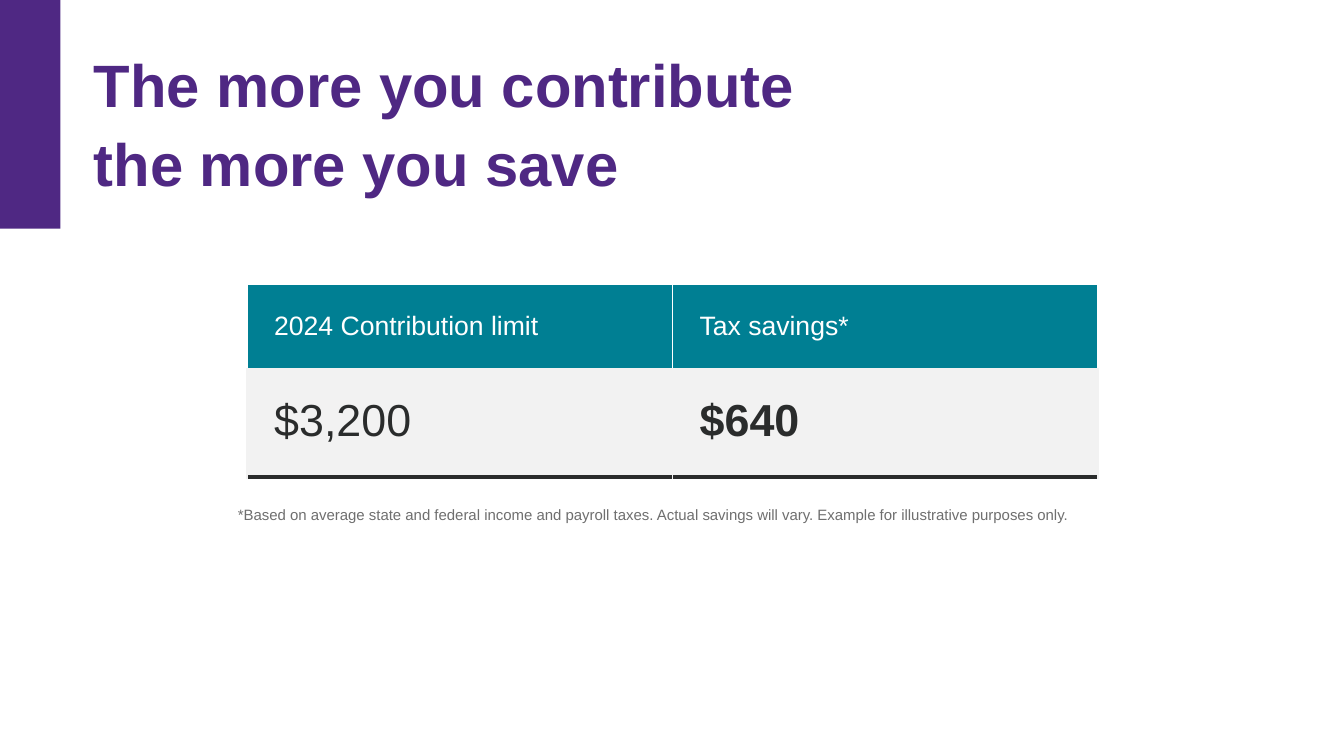
"""Build the slide on contribution limits and tax savings."""
from lxml import etree
from pptx import Presentation
from pptx import util as u
from pptx.dml.color import RGBColor
from pptx.enum import shapes, text
from pptx.oxml.ns import qn

TITLE = "The more you contribute\vthe more you save"
SAVINGS = [("2024 Contribution limit", "Tax savings*"), ("$3,200", "$640")]
FOOTNOTE = ("*Based on average state and federal income and payroll taxes. "
            "Actual savings will vary. Example for illustrative purposes only.")

THEME = {
    "font": "Arial",
    "purple": "4F2883", "teal": "007F93", "white": "FFFFFF",
    "pale": "F2F2F2", "ink": "2A2C2C", "grey": "6F6F6F",
    "title": 42.7, "header": 19, "figure": 32, "note": 10.7,
}
WIDTH, HEIGHT = 13.33, 7.5
BAR = (0, 0, 0.6, 2.27)
TITLE_AREA = (0.93, 0.4, 11.85, 1.52)
COLUMN, ROWS = 4.22, (0.84, 1.07)
TABLE_AREA = (2.45, 2.82, COLUMN * 2, sum(ROWS))
NOTE_AREA = (2.26, 4.97, 8.89, 0.28)
CELL_INSET = 0.27

ROW_STYLES = [
    {"fill": "teal", "color": "white", "size": "header", "anchor": text.MSO_ANCHOR.MIDDLE,
     "edges": {"L": ("white", 1), "R": ("white", 1), "T": ("white", 1), "B": ("pale", 1)}},
    {"fill": "pale", "color": "ink", "size": "figure", "anchor": text.MSO_ANCHOR.TOP,
     "edges": {"L": ("pale", 1), "R": ("pale", 1), "T": ("pale", 1), "B": ("ink", 3)}},
]


def color(name):
    return RGBColor.from_string(THEME[name])


def box(area):
    return [u.Inches(length) for length in area]


def set_all(target, values):
    for name, value in values.items():
        setattr(target, name, value)


def place(part, area):
    set_all(part, dict(zip(("left", "top", "width", "height"), box(area))))


def insets(length):
    sides = ("left", "top", "right", "bottom")
    return {f"margin_{side}": u.Inches(length) for side in sides}


def write(frame, words, size, ink, bold=False):
    frame.text = words
    for paragraph in frame.paragraphs:
        paragraph.alignment = text.PP_ALIGN.LEFT
        for run in paragraph.runs:
            set_all(run.font, {"name": THEME["font"], "size": u.Pt(THEME[size]), "bold": bold})
            run.font.color.rgb = color(ink)


def draw_edges(cell, edges):
    properties = cell._tc.get_or_add_tcPr()
    for side, (ink, points) in edges.items():
        edge = etree.SubElement(properties, qn(f"a:ln{side}"), w=str(u.Pt(points)))
        fill = etree.SubElement(edge, qn("a:solidFill"))
        etree.SubElement(fill, qn("a:srgbClr"), val=THEME[ink])


def add_bar(slide):
    bar = slide.shapes.add_shape(shapes.MSO_SHAPE.RECTANGLE, *box(BAR))
    bar.shadow.inherit = False
    bar.fill.solid()
    bar.fill.fore_color.rgb = color("purple")
    bar.line.fill.background()


def add_title(slide):
    title = slide.shapes.title
    place(title, TITLE_AREA)
    set_all(title.text_frame, {**insets(0), "word_wrap": True,
                               "vertical_anchor": text.MSO_ANCHOR.TOP,
                               "auto_size": text.MSO_AUTO_SIZE.NONE})
    write(title.text_frame, TITLE, "title", "purple", bold=True)
    title.text_frame.paragraphs[0].line_spacing = 1.1


def add_savings(slide):
    table = slide.shapes.add_table(len(SAVINGS), len(SAVINGS[0]), *box(TABLE_AREA)).table
    table.horz_banding = False
    for column in table.columns:
        column.width = u.Inches(COLUMN)
    for row, height, words, style in zip(table.rows, ROWS, SAVINGS, ROW_STYLES):
        row.height = u.Inches(height)
        for cell, label in zip(row.cells, words):
            set_all(cell, {**insets(CELL_INSET), "vertical_anchor": style["anchor"]})
            write(cell.text_frame, label, style["size"], style["color"],
                  bold=label == SAVINGS[-1][-1])
            draw_edges(cell, style["edges"])
            cell.fill.solid()
            cell.fill.fore_color.rgb = color(style["fill"])


def add_footnote(slide):
    note = slide.shapes.add_textbox(*box(NOTE_AREA))
    note.text_frame.word_wrap = True
    write(note.text_frame, FOOTNOTE, "note", "grey")


def main():
    deck = Presentation()
    set_all(deck, {"slide_width": u.Inches(WIDTH), "slide_height": u.Inches(HEIGHT)})
    slide = deck.slides.add_slide(deck.slide_layouts.get_by_name("Title Only"))
    for add_part in (add_bar, add_title, add_savings, add_footnote):
        add_part(slide)
    deck.save("out.pptx")


if __name__ == "__main__":
    main()
